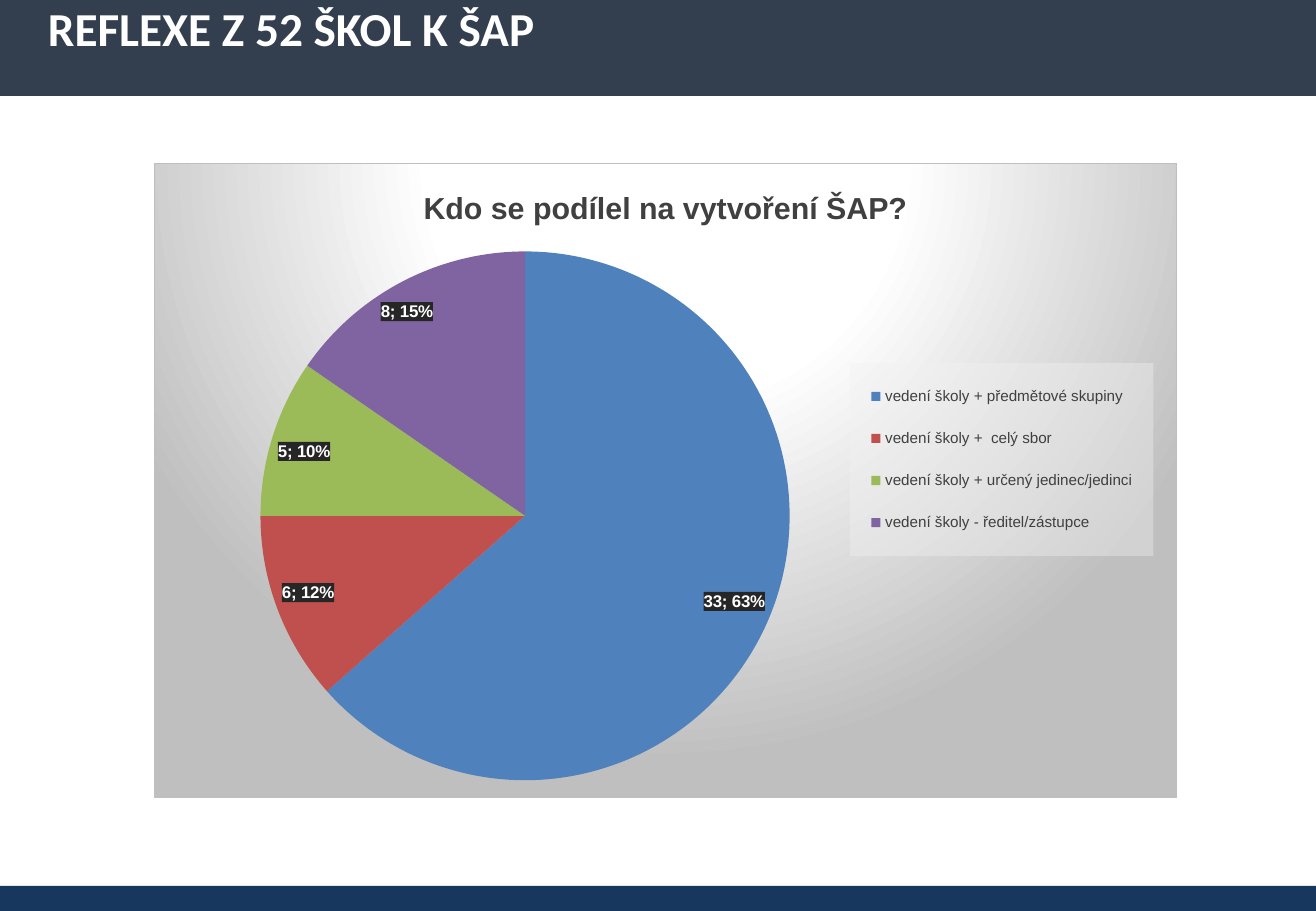
"""Slide with a pie chart of who took part in writing the school plan."""
from lxml import etree
from pptx import Presentation
from pptx.chart.data import CategoryChartData
from pptx.dml.color import RGBColor
from pptx.enum.chart import XL_CHART_TYPE, XL_LABEL_POSITION, XL_LEGEND_POSITION
from pptx.enum.shapes import MSO_SHAPE
from pptx.enum.text import MSO_ANCHOR, MSO_AUTO_SIZE, PP_ALIGN
from pptx.util import Emu, Pt

PIE = XL_CHART_TYPE.PIE
BEST_FIT = XL_LABEL_POSITION.BEST_FIT
RIGHT = XL_LEGEND_POSITION.RIGHT
RECT = MSO_SHAPE.RECTANGLE
TOP = MSO_ANCHOR.TOP
NO_FIT = MSO_AUTO_SIZE.NONE
LEFT = PP_ALIGN.LEFT

TITLE = "REFLEXE Z 52 ŠKOL K ŠAP"
CHART_TITLE = "Kdo se podílel na vytvoření ŠAP?"
SLICES = [
    ("vedení školy + předmětové skupiny", 33, "4F81BD"),
    ("vedení školy +  celý sbor", 6, "C0504D"),
    ("vedení školy + určený jedinec/jedinci", 5, "9BBB59"),
    ("vedení školy - ředitel/zástupce", 8, "8064A2"),
]

SLIDE_W, SLIDE_H = 1316, 911
TITLE_BOX = (0, 0, SLIDE_W, 96)
FOOTER_BOX = (0, 886, SLIDE_W, 25)
CHART_BOX = (154, 163, 1023, 635)
PIE_BOX = (260, 251, 530, 530)
LEGEND_BOX = (850, 363, 304, 193)

NS = ('xmlns:c="http://schemas.openxmlformats.org/drawingml/2006/chart" '
      'xmlns:a="http://schemas.openxmlformats.org/drawingml/2006/main"')
C = "{http://schemas.openxmlformats.org/drawingml/2006/chart}"
BACKGROUND = """<a:gradFill><a:gsLst>
<a:gs pos="0"><a:srgbClr val="FFFFFF"/></a:gs>
<a:gs pos="39000"><a:srgbClr val="FFFFFF"/></a:gs>
<a:gs pos="100000"><a:srgbClr val="BFBFBF"/></a:gs></a:gsLst>
<a:path path="circle"><a:fillToRect l="50000" t="-80000" r="50000" b="180000"/></a:path></a:gradFill>
<a:ln w="9525"><a:solidFill><a:srgbClr val="BFBFBF"/></a:solidFill></a:ln>"""


def px(n):
    return Emu(round(n * 914400 / 121.5))


def rgb(color):
    return RGBColor.from_string(color)


def style(font, size, color, bold=False, name="Arial"):
    font.name, font.size, font.bold = name, Pt(size), bold
    font.color.rgb = rgb(color)


def solid(shape, color):
    shape.fill.solid()
    shape.fill.fore_color.rgb = rgb(color)
    shape.line.fill.background()


def sp_pr(content):
    return etree.fromstring(f"<c:spPr {NS}>{content}</c:spPr>")


def alpha_fill(color, percent):
    return sp_pr(f'<a:solidFill><a:srgbClr val="{color}">'
                 f'<a:alpha val="{percent * 1000}"/></a:srgbClr></a:solidFill>')


def layout(box, target=""):
    x0, y0, cw, ch = CHART_BOX
    x, y, w, h = box
    parts = {"x": (x - x0) / cw, "y": (y - y0) / ch, "w": w / cw, "h": h / ch}
    values = "".join(f'<c:{k} val="{v:.4f}"/>' for k, v in parts.items())
    return etree.fromstring(
        f'<c:layout {NS}><c:manualLayout>{target}<c:xMode val="edge"/>'
        f'<c:yMode val="edge"/>{values}</c:manualLayout></c:layout>')


def drop_layout(element):
    for old in element.findall(C + "layout"):
        element.remove(old)


def add_title(s):
    sp = s.shapes.title
    sp.left, sp.top, sp.width, sp.height = map(px, TITLE_BOX)
    solid(sp, "333F4F")
    tf = sp.text_frame
    tf.word_wrap, tf.auto_size, tf.vertical_anchor = True, NO_FIT, TOP
    tf.margin_left = tf.margin_right = px(48)
    tf.margin_top, tf.margin_bottom = px(6), px(5)
    p = tf.paragraphs[0]
    p.alignment, p.line_spacing = LEFT, 0.9
    r = p.add_run()
    r.text = TITLE
    style(r.font, 28, "FFFFFF", True, "Calibri")


def add_footer(s):
    sp = s.shapes.add_shape(RECT, *map(px, FOOTER_BOX))
    sp.shadow.inherit = False
    solid(sp, "17375E")


def add_pie(s):
    data = CategoryChartData()
    data.categories = [name for name, _, _ in SLICES]
    data.add_series("Series 1", [value for _, value, _ in SLICES])
    chart = s.shapes.add_chart(PIE, *map(px, CHART_BOX), data).chart
    style(chart.font, 10, "000000")
    space = chart._chartSpace
    space.find(C + "chart").addnext(sp_pr(BACKGROUND))

    chart.has_title = True
    r = chart.chart_title.text_frame.paragraphs[0].add_run()
    r.text = CHART_TITLE
    style(r.font, 18, "404040", True)

    area = space.find(f"{C}chart/{C}plotArea")
    drop_layout(area)
    area.insert(0, layout(PIE_BOX, '<c:layoutTarget val="inner"/>'))

    chart.has_legend = True
    legend = chart.legend
    legend.position, legend.include_in_layout = RIGHT, False
    style(legend.font, 9, "404040")
    el = legend._element
    drop_layout(el)
    el.find(C + "legendPos").addnext(layout(LEGEND_BOX))
    el.find(C + "txPr").addprevious(alpha_fill("F2F2F2", 39))

    plot = chart.plots[0]
    plot.vary_by_categories = True
    series = plot.series[0]
    for i, (_, _, color) in enumerate(SLICES):
        solid(series.points[i].format, color)

    labels = series.data_labels
    labels.show_value = labels.show_percentage = True
    labels.position = BEST_FIT
    style(labels.font, 10, "FFFFFF", True)
    el = labels._element
    el.find(C + "txPr").addprevious(alpha_fill("262626", 80))
    separator = etree.fromstring(f"<c:separator {NS}>; </c:separator>")
    el.find(C + "showPercent").addnext(separator)
    bubble = el.find(C + "showBubbleSize")
    if bubble is not None:
        bubble.addnext(separator)


def main():
    prs = Presentation()
    prs.slide_width, prs.slide_height = px(SLIDE_W), px(SLIDE_H)
    s = prs.slides.add_slide(prs.slide_layouts[5])
    add_footer(s)
    add_title(s)
    add_pie(s)
    prs.save("out.pptx")


if __name__ == "__main__":
    main()
